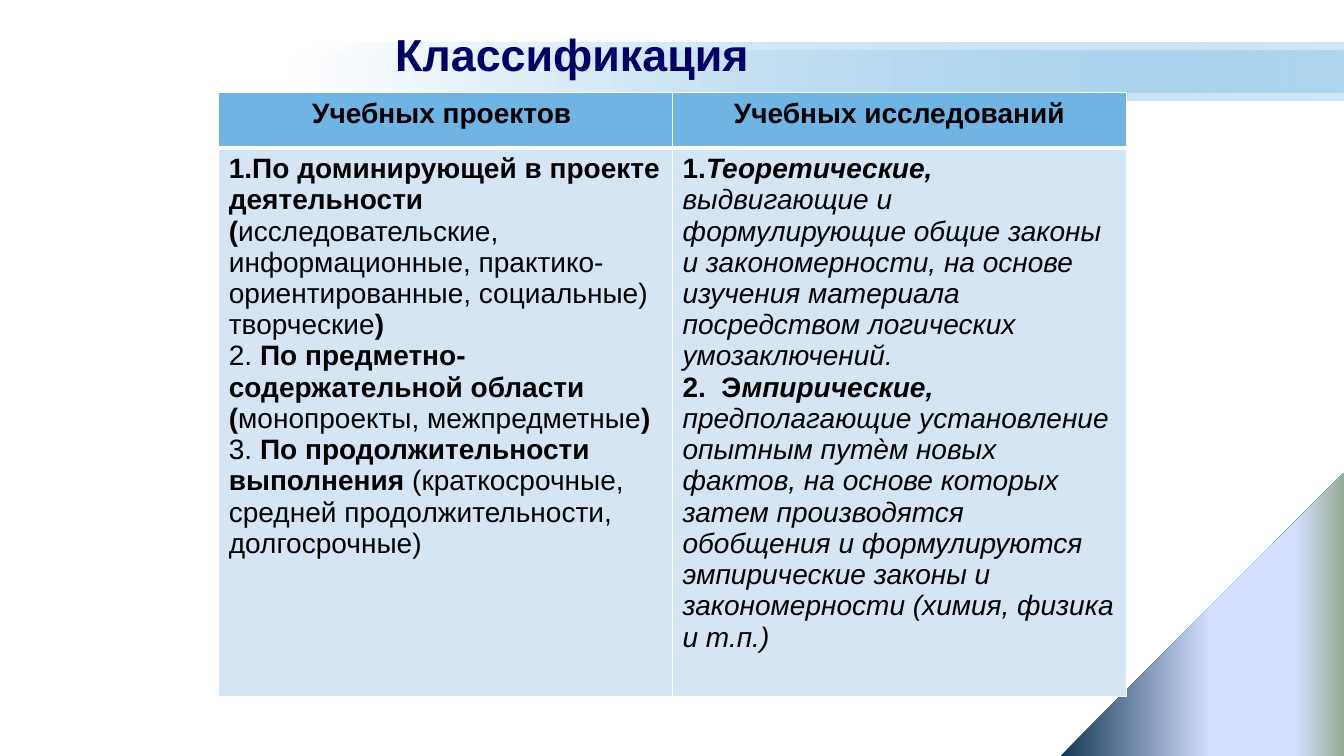
"""Build a slide with a two-column table classifying study projects and research."""
from dataclasses import dataclass

from lxml import etree
from pptx import Presentation
from pptx import util as u
from pptx.dml.color import RGBColor
from pptx.enum import shapes, text
from pptx.oxml.ns import qn

PX = 9144


@dataclass(frozen=True)
class Theme:
    font: str = "Arial"
    title_size: int = 32
    body_size: int = 20
    title: str = "000066"
    ink: str = "000000"
    white: str = "FFFFFF"
    sky: str = "6FB4E3"
    pale: str = "D5E5F4"
    navy: str = "143756"
    lavender: str = "D4DEFF"
    sage: str = "96AB94"


T = Theme()
BAND_STOPS = [(0, T.white, 100), (100, T.sky, 32)]
CORNER_STOPS = [(0, T.navy, 100), (53, T.lavender, 100),
                (83, T.lavender, 100), (100, T.sage, 100)]

HEADERS = ["Учебных проектов ", "Учебных исследований"]
PROJECTS = [
    [("1.По доминирующей в проекте деятельности (", "b"),
     ("исследовательские, информационные, практико-ориентированные, "
      "социальные) творческие", ""),
     (")", "b")],
    [("2. ", ""), ("По предметно-содержательной области (", "b"),
     ("монопроекты, межпредметные", ""), (")", "b")],
    [("3. ", ""), ("По продолжительности выполнения ", "b"),
     ("(краткосрочные, средней продолжительности, долгосрочные)", "")],
]
RESEARCH = [
    [("1.", "b"), ("Теоретические, ", "bi"),
     ("выдвигающие и формулирующие общие законы и закономерности, на основе "
      "изучения материала посредством логических умозаключений.", "i")],
    [("2.  Э", "b"), ("мпирические, ", "bi"),
     ("предполагающие установление опытным путѐм новых фактов, на основе "
      "которых затем производятся обобщения и формулируются эмпирические "
      "законы и закономерности (химия, физика и т.п.)", "i")],
]


def px(*lengths):
    return [u.Emu(n * PX) for n in lengths]


def style_font(font, size, color):
    font.name = T.font
    font.size = u.Pt(size)
    font.color.rgb = RGBColor.from_string(color)


def add_gradient_shape(s, kind, box, stops, angle=0, rotation=0):
    sp = s.shapes.add_shape(kind, *px(*box))
    sp.shadow.inherit = False
    sp.line.fill.background()
    sp.rotation = rotation
    sp.fill.gradient()
    sp.fill.gradient_angle = angle
    stop_list = sp._element.spPr.find(".//" + qn("a:gsLst"))
    stop_list.clear()
    for position, color, opacity in stops:
        gs = etree.SubElement(stop_list, qn("a:gs"), pos=str(position * 1000))
        clr = etree.SubElement(gs, qn("a:srgbClr"), val=color)
        if opacity < 100:
            etree.SubElement(clr, qn("a:alpha"), val=str(opacity * 1000))


def add_title(s, box, title):
    tf = s.shapes.add_textbox(*px(*box)).text_frame
    tf.word_wrap = True
    tf.vertical_anchor = text.MSO_ANCHOR.MIDDLE
    p = tf.paragraphs[0]
    p.text = title
    style_font(p.font, T.title_size, T.title)
    p.font.bold = True


def set_borders(cell, widths):
    tc_pr = cell._tc.get_or_add_tcPr()
    for side, width in widths.items():
        ln = etree.SubElement(tc_pr, qn("a:ln" + side), w=str(u.Pt(width)))
        fill = etree.SubElement(ln, qn("a:solidFill"))
        etree.SubElement(fill, qn("a:srgbClr"), val=T.white)


def fill_cell(cell, paragraphs, color, borders, align):
    set_borders(cell, borders)
    cell.fill.solid()
    cell.fill.fore_color.rgb = RGBColor.from_string(color)
    tf = cell.text_frame
    for i, runs in enumerate(paragraphs):
        p = tf.add_paragraph() if i else tf.paragraphs[0]
        p.alignment = align
        style_font(p.font, T.body_size, T.ink)
        for words, marks in runs:
            r = p.add_run()
            r.text = words
            r.font.bold = "b" in marks
            r.font.italic = "i" in marks


def add_classification(s, box, row_heights):
    table = s.shapes.add_table(2, 2, *px(*box)).table
    table.first_row = table.horz_banding = False
    for row, height in zip(table.rows, px(*row_heights)):
        row.height = height
    for col, (header, body) in enumerate(zip(HEADERS, (PROJECTS, RESEARCH))):
        fill_cell(table.cell(0, col), [[(header, "b")]], T.sky,
                  {"L": 1, "R": 1, "T": 1, "B": 3}, text.PP_ALIGN.CENTER)
        fill_cell(table.cell(1, col), body, T.pale,
                  {"L": 1, "R": 1, "T": 3, "B": 1}, text.PP_ALIGN.LEFT)


def main():
    prs = Presentation()
    prs.slide_width, prs.slide_height = px(1333, 750)
    s = prs.slides.add_slide(prs.slide_layouts[6])
    for band in ((311, 42, 1022, 58), (289, 50, 1044, 42)):
        add_gradient_shape(s, shapes.MSO_SHAPE.RECTANGLE, band, BAND_STOPS)
    add_gradient_shape(s, shapes.MSO_SHAPE.RIGHT_TRIANGLE, (1052, 469, 281, 281),
                       CORNER_STOPS, angle=270, rotation=270)
    add_title(s, (382, 30, 735, 46), "Классификация")
    add_classification(s, (217, 92, 900, 560), (55, 505))
    prs.save("out.pptx")


if __name__ == "__main__":
    main()
